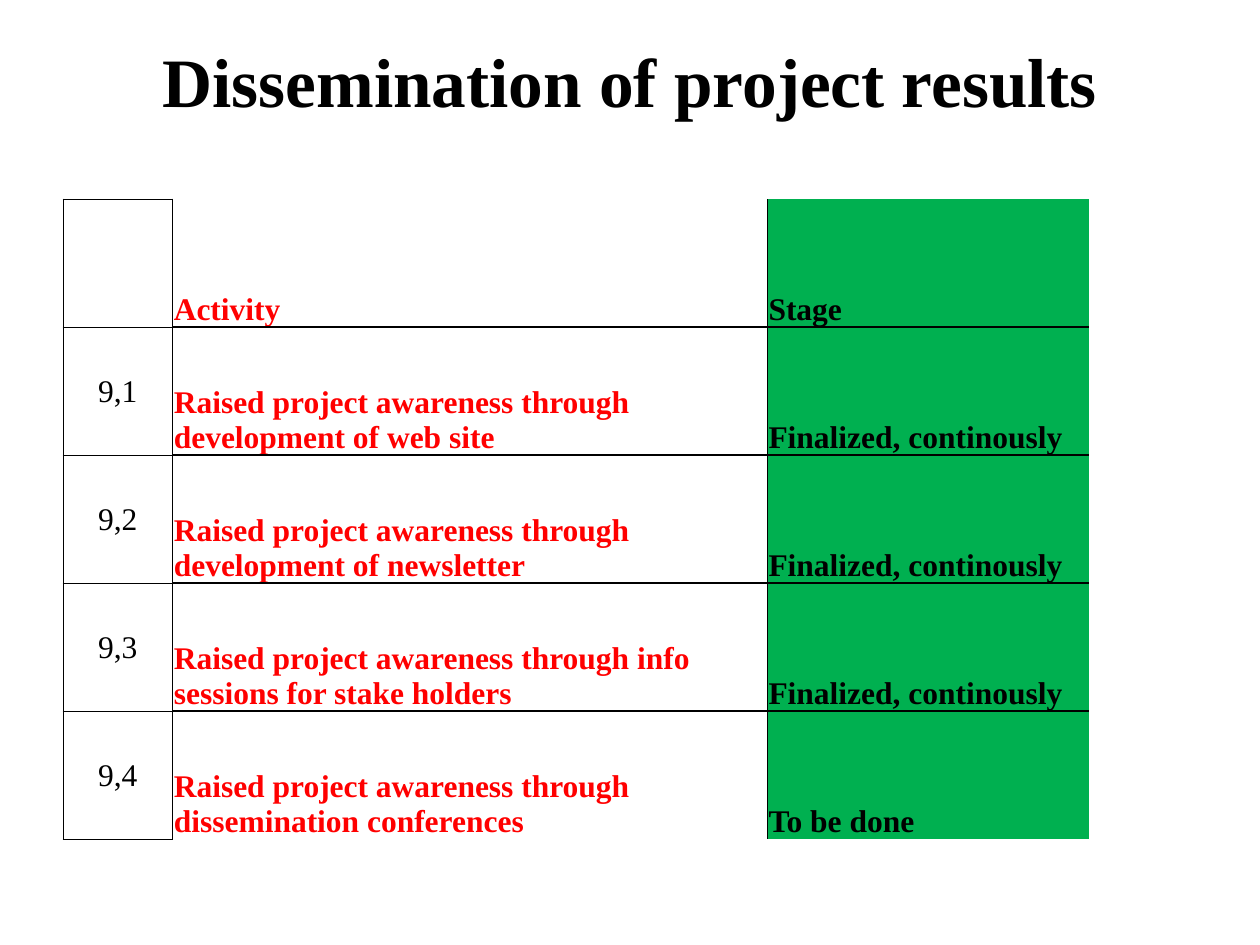
from dataclasses import dataclass
from typing import NamedTuple

from lxml import etree
from pptx import Presentation
from pptx.dml.color import RGBColor
from pptx.enum.text import MSO_ANCHOR, PP_ALIGN
from pptx.oxml.ns import qn
from pptx.util import Inches, Pt

TOP, MIDDLE, BOTTOM = MSO_ANCHOR.TOP, MSO_ANCHOR.MIDDLE, MSO_ANCHOR.BOTTOM
LEFT, CENTER = PP_ALIGN.LEFT, PP_ALIGN.CENTER
TITLE_ONLY = 5


@dataclass(frozen=True)
class Theme:
    font: str = "Times New Roman"
    black: str = "000000"
    red: str = "FF0000"
    green: str = "00B050"
    title_size: float = 39.6
    table_size: float = 18
    thin: float = 0.5
    thick: float = 1


THEME = Theme()


class Column(NamedTuple):
    width: float
    color: str
    bold: bool
    align: PP_ALIGN
    anchor: MSO_ANCHOR
    fill: str | None


class Activity(NamedTuple):
    number: str
    name: str
    stage: str


COLUMNS = [
    Column(0.87, THEME.black, False, CENTER, MIDDLE, None),
    Column(4.72, THEME.red, True, LEFT, BOTTOM, None),
    Column(2.55, THEME.black, True, LEFT, BOTTOM, THEME.green),
]
ROWS = [
    Activity("", "Activity", "Stage"),
    Activity("9,1", "Raised project awareness through development of web site",
             "Finalized, continously"),
    Activity("9,2", "Raised project awareness through development of newsletter",
             "Finalized, continously"),
    Activity("9,3", "Raised project awareness through info sessions for stake holders",
             "Finalized, continously"),
    Activity("9,4", "Raised project awareness through dissemination conferences",
             "To be done"),
]
ROW_HEIGHT = 1.016


def style_font(font, size: float, color: str, bold: bool) -> None:
    font.name = THEME.font
    font.size = Pt(size)
    font.bold = bold
    font.color.rgb = RGBColor.from_string(color)


def border_widths(row: int, column: int) -> dict[str, float]:
    """Number column is boxed; the others have inner lines only."""
    if column == 0:
        return dict.fromkeys("LRTB", THEME.thin)
    return {
        "L": THEME.thin if column == 1 else THEME.thick,
        "R": THEME.thick if column < len(COLUMNS) - 1 else 0,
        "T": THEME.thick if row > 0 else 0,
        "B": THEME.thick if row < len(ROWS) - 1 else 0,
    }


def set_borders(cell, widths: dict[str, float]) -> None:
    properties = cell._tc.get_or_add_tcPr()
    for index, (side, width) in enumerate(widths.items()):
        line = etree.Element(qn(f"a:ln{side}"), w=str(int(Pt(width))))
        if width:
            fill = etree.SubElement(line, qn("a:solidFill"))
            etree.SubElement(fill, qn("a:srgbClr"), val=THEME.black)
        else:
            etree.SubElement(line, qn("a:noFill"))
        properties.insert(index, line)


def fill_cell(cell, text: str, column: Column) -> None:
    cell.margin_left = cell.margin_right = cell.margin_top = Inches(0.01)
    cell.margin_bottom = 0
    cell.vertical_anchor = column.anchor
    if column.fill:
        cell.fill.solid()
        cell.fill.fore_color.rgb = RGBColor.from_string(column.fill)
    else:
        cell.fill.background()
    cell.text = text
    para = cell.text_frame.paragraphs[0]
    para.alignment = column.align
    style_font(para.font, THEME.table_size, column.color, column.bold)


def add_title(page, text: str) -> None:
    title = page.shapes.title
    title.left, title.top = Inches(0.5), Inches(0.3)
    title.width, title.height = Inches(9), Inches(1.25)
    frame = title.text_frame
    frame.text = text
    frame.vertical_anchor = TOP
    frame.margin_top = 0
    para = frame.paragraphs[0]
    para.alignment = CENTER
    style_font(para.font, THEME.title_size, THEME.black, True)


def add_activity_table(page) -> None:
    width = sum(column.width for column in COLUMNS)
    table = page.shapes.add_table(
        len(ROWS), len(COLUMNS), Inches(0.5), Inches(1.58),
        Inches(width), Inches(ROW_HEIGHT * len(ROWS))).table
    table.first_row = table.horz_banding = False
    for column_index, column in enumerate(COLUMNS):
        table.columns[column_index].width = Inches(column.width)
    for row_index, activity in enumerate(ROWS):
        table.rows[row_index].height = Inches(ROW_HEIGHT)
        for column_index, (text, column) in enumerate(zip(activity, COLUMNS)):
            cell = table.cell(row_index, column_index)
            fill_cell(cell, text, column)
            set_borders(cell, border_widths(row_index, column_index))


def main() -> None:
    deck = Presentation()
    deck.slide_width, deck.slide_height = Inches(10), Inches(7.5)
    page = deck.slides.add_slide(deck.slide_layouts[TITLE_ONLY])
    # Heading
    add_title(page, "Dissemination of project results")
    # Activities and their stages
    add_activity_table(page)
    deck.save("out.pptx")


if __name__ == "__main__":
    main()
